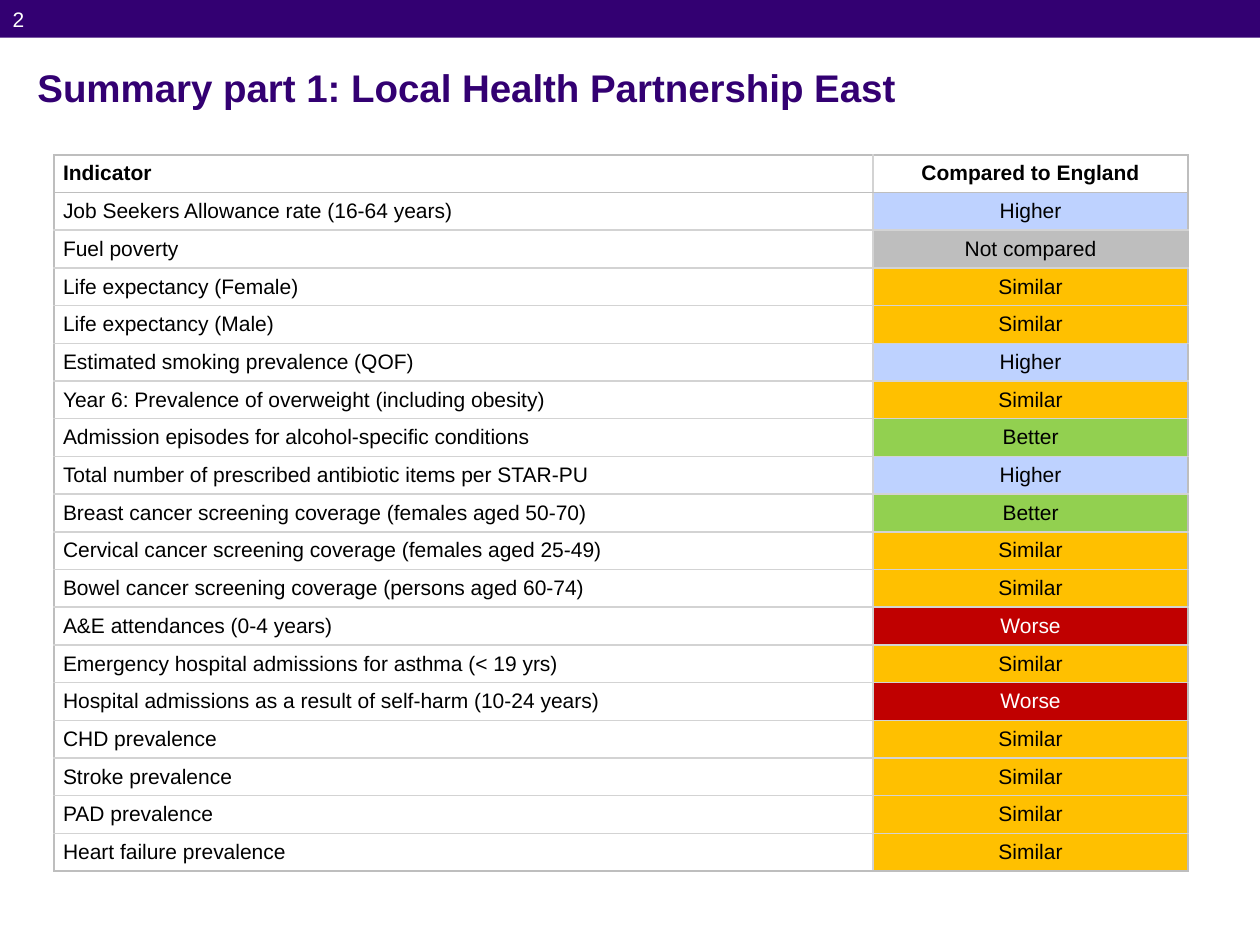
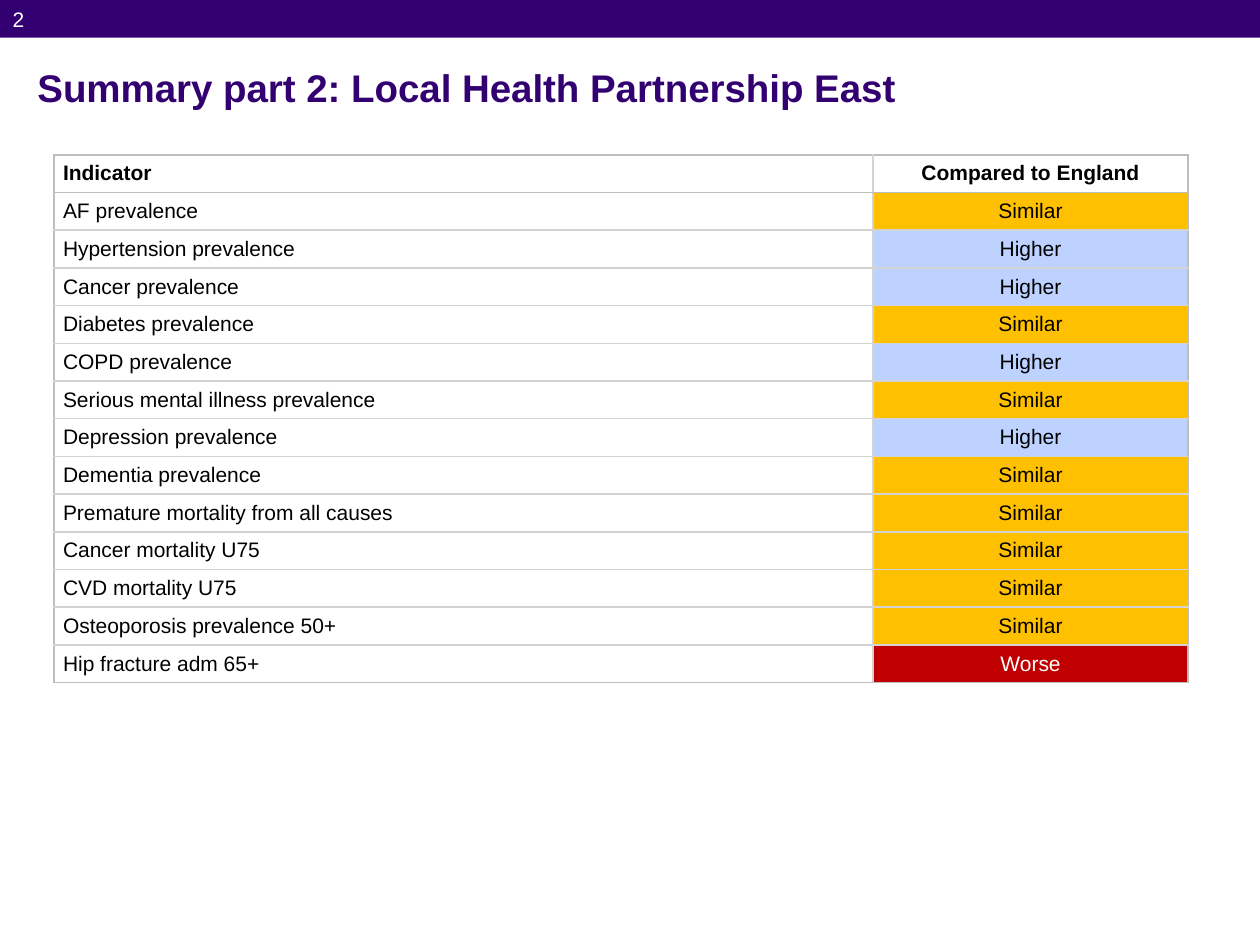
from dataclasses import dataclass
from typing import NamedTuple

import lxml.etree
import pptx
import pptx.dml.color
import pptx.enum.shapes
import pptx.enum.text
import pptx.oxml.ns
import pptx.presentation
import pptx.shapes.base
import pptx.slide
import pptx.table
import pptx.text.text
import pptx.util

Cm = pptx.util.Cm
Pt = pptx.util.Pt
qn = pptx.oxml.ns.qn
Align = pptx.enum.text.PP_ALIGN
Anchor = pptx.enum.text.MSO_ANCHOR


@dataclass(frozen=True)
class Theme:
    font: str = "Arial"
    title_size: int = 22
    text_size: int = 12
    cell_spacing: int = 5
    purple: str = "330072"
    white: str = "FFFFFF"
    black: str = "000000"
    outer_border: str = "BEBEBE"
    inner_border: str = "D3D3D3"


class Box(NamedTuple):
    left: float
    top: float
    width: float
    height: float


class Rating(NamedTuple):
    label: str
    fill: str
    text: str


class Indicator(NamedTuple):
    name: str
    rating: Rating


class Summary(NamedTuple):
    title: str
    indicators: list[Indicator]


THEME = Theme()
BAND = Box(0, 0, 25.4, 0.76)
TITLE = Box(0.5, 1.19, 24.4, 1.15)
PAGE_NUMBER = Box(0, 0, 1.6, 1.6)
TABLE_LEFT, TABLE_TOP = 1.09, 3.12
COLUMN_WIDTHS = (16.51, 6.35)
ROW_HEIGHT = 0.76
CELL_INDENT = 0.18

HIGHER = Rating("Higher", "BED2FF", THEME.black)
SIMILAR = Rating("Similar", "FFC000", THEME.black)
BETTER = Rating("Better", "92D050", THEME.black)
WORSE = Rating("Worse", "C00000", THEME.white)
NOT_COMPARED = Rating("Not compared", "BEBEBE", THEME.black)

SUMMARIES = [
    Summary("Summary part 1: Local Health Partnership East", [
        Indicator("Job Seekers Allowance rate (16-64 years)", HIGHER),
        Indicator("Fuel poverty", NOT_COMPARED),
        Indicator("Life expectancy (Female)", SIMILAR),
        Indicator("Life expectancy (Male)", SIMILAR),
        Indicator("Estimated smoking prevalence (QOF)", HIGHER),
        Indicator("Year 6: Prevalence of overweight (including obesity)", SIMILAR),
        Indicator("Admission episodes for alcohol-specific conditions", BETTER),
        Indicator("Total number of prescribed antibiotic items per STAR-PU", HIGHER),
        Indicator("Breast cancer screening coverage (females aged 50-70)", BETTER),
        Indicator("Cervical cancer screening coverage (females aged 25-49)", SIMILAR),
        Indicator("Bowel cancer screening coverage (persons aged 60-74)", SIMILAR),
        Indicator("A&E attendances (0-4 years)", WORSE),
        Indicator("Emergency hospital admissions for asthma (< 19 yrs)", SIMILAR),
        Indicator("Hospital admissions as a result of self-harm (10-24 years)", WORSE),
        Indicator("CHD prevalence", SIMILAR),
        Indicator("Stroke prevalence", SIMILAR),
        Indicator("PAD prevalence", SIMILAR),
        Indicator("Heart failure prevalence", SIMILAR),
    ]),
    Summary("Summary part 2: Local Health Partnership East", [
        Indicator("AF prevalence", SIMILAR),
        Indicator("Hypertension prevalence", HIGHER),
        Indicator("Cancer prevalence", HIGHER),
        Indicator("Diabetes prevalence", SIMILAR),
        Indicator("COPD prevalence", HIGHER),
        Indicator("Serious mental illness prevalence", SIMILAR),
        Indicator("Depression prevalence", HIGHER),
        Indicator("Dementia prevalence", SIMILAR),
        Indicator("Premature mortality from all causes", SIMILAR),
        Indicator("Cancer mortality U75", SIMILAR),
        Indicator("CVD mortality U75", SIMILAR),
        Indicator("Osteoporosis prevalence 50+", SIMILAR),
        Indicator("Hip fracture adm 65+", WORSE),
    ]),
]


def rgb(value: str) -> pptx.dml.color.RGBColor:
    return pptx.dml.color.RGBColor.from_string(value)


def place(shape: pptx.shapes.base.BaseShape, box: Box) -> None:
    shape.left, shape.top, shape.width, shape.height = map(Cm, box)


def add_run(paragraph: pptx.text.text._Paragraph, text: str, size: int,
            color: str, bold: bool = False) -> None:
    run = paragraph.add_run()
    run.text = text
    run.font.name = THEME.font
    run.font.size = Pt(size)
    run.font.bold = bold
    run.font.color.rgb = rgb(color)


def set_indent(paragraph: pptx.text.text._Paragraph, left: float, right: float) -> None:
    properties = paragraph._p.get_or_add_pPr()
    properties.set("marL", str(Cm(left)))
    properties.set("marR", str(Cm(right)))
    properties.set("indent", "0")


def add_heading(slide: pptx.slide.Slide, title: str) -> None:
    title_shape = slide.shapes.title
    place(title_shape, TITLE)
    frame = title_shape.text_frame
    frame.auto_size = pptx.enum.text.MSO_AUTO_SIZE.NONE
    frame.vertical_anchor = Anchor.MIDDLE
    frame.paragraphs[0].alignment = Align.LEFT
    add_run(frame.paragraphs[0], title, THEME.title_size, THEME.purple, True)

    band = slide.shapes.add_shape(
        pptx.enum.shapes.MSO_SHAPE.RECTANGLE, *map(Cm, BAND))
    band.shadow.inherit = False
    band.fill.solid()
    band.fill.fore_color.rgb = rgb(THEME.purple)
    band.line.fill.background()
    title_shape.element.addprevious(band.element)


def add_page_number(slide: pptx.slide.Slide, number: str) -> None:
    body = slide.placeholders[1]
    place(body, PAGE_NUMBER)
    body.text_frame.auto_size = pptx.enum.text.MSO_AUTO_SIZE.NONE
    paragraph = body.text_frame.paragraphs[0]
    paragraph.space_after = Pt(4.9)
    set_indent(paragraph, 0, 0)
    lxml.etree.SubElement(paragraph._p.get_or_add_pPr(), qn("a:buNone"))
    add_run(paragraph, number, THEME.text_size, THEME.white)


def set_borders(cell: pptx.table._Cell, outer_sides: dict[str, bool]) -> None:
    properties = cell._tc.get_or_add_tcPr()
    for side, outer in outer_sides.items():
        line = lxml.etree.SubElement(properties, qn(f"a:ln{side}"), w=str(Pt(1)))
        fill = lxml.etree.SubElement(line, qn("a:solidFill"))
        color = THEME.outer_border if outer else THEME.inner_border
        lxml.etree.SubElement(fill, qn("a:srgbClr"), val=color)


def fill_cell(cell: pptx.table._Cell, text: str, centred: bool, bold: bool,
              rating: Rating | None) -> None:
    cell.margin_left = cell.margin_right = cell.margin_top = cell.margin_bottom = 0
    cell.vertical_anchor = Anchor.MIDDLE
    if rating:
        cell.fill.solid()
        cell.fill.fore_color.rgb = rgb(rating.fill)
    else:
        cell.fill.background()
    paragraph = cell.text_frame.paragraphs[0]
    paragraph.alignment = Align.CENTER if centred else Align.LEFT
    paragraph.space_before = paragraph.space_after = Pt(THEME.cell_spacing)
    set_indent(paragraph, CELL_INDENT, CELL_INDENT)
    add_run(paragraph, text, THEME.text_size, rating.text if rating else THEME.black, bold)


def add_indicator_table(slide: pptx.slide.Slide, indicators: list[Indicator]) -> None:
    row_count = len(indicators) + 1
    box = Box(TABLE_LEFT, TABLE_TOP, sum(COLUMN_WIDTHS), ROW_HEIGHT * row_count)
    table = slide.shapes.add_table(row_count, len(COLUMN_WIDTHS), *map(Cm, box)).table
    table.first_row = table.horz_banding = False
    for column, width in zip(table.columns, COLUMN_WIDTHS):
        column.width = Cm(width)
    rows = [("Indicator", "Compared to England", None)]
    rows += [(item.name, item.rating.label, item.rating) for item in indicators]
    for row_index, (name, label, rating) in enumerate(rows):
        table.rows[row_index].height = Cm(ROW_HEIGHT)
        header = row_index == 0
        for column_index, text in enumerate((name, label)):
            cell = table.cell(row_index, column_index)
            last_column = column_index == 1
            set_borders(cell, {
                "L": not last_column,
                "R": last_column,
                "T": row_index <= 1,
                "B": header or row_index == row_count - 1,
            })
            fill_cell(cell, text, last_column, header, rating if last_column else None)


def add_summary_slide(presentation: pptx.presentation.Presentation,
                      summary: Summary) -> None:
    slide = presentation.slides.add_slide(presentation.slide_layouts[1])
    add_heading(slide, summary.title)
    add_page_number(slide, "2")
    add_indicator_table(slide, summary.indicators)


def main() -> None:
    presentation = pptx.Presentation()
    presentation.slide_width = Cm(25.4)
    presentation.slide_height = Cm(19.05)
    for summary in SUMMARIES:
        add_summary_slide(presentation, summary)
    presentation.save("out.pptx")


if __name__ == "__main__":
    main()
